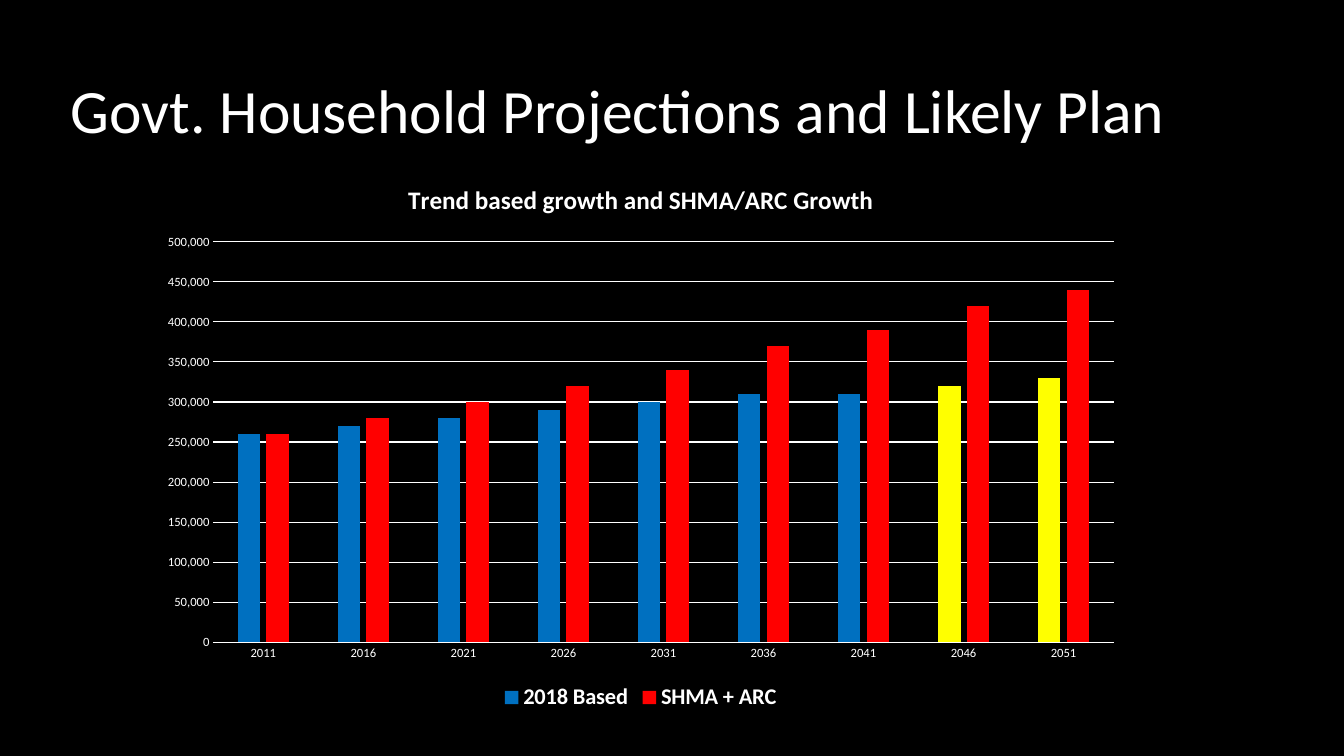
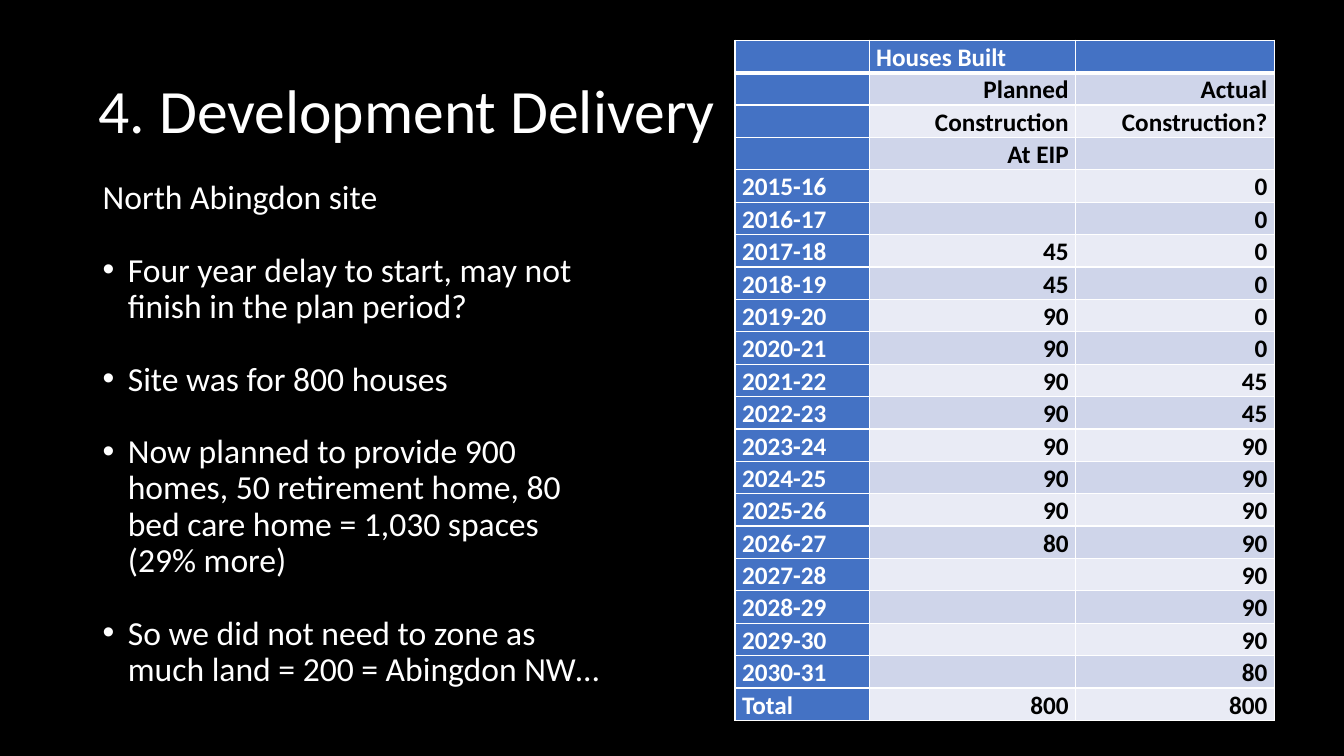
from dataclasses import dataclass

from lxml import etree
from pptx import Presentation
from pptx.chart.data import CategoryChartData
from pptx.dml.color import RGBColor
from pptx.enum.chart import XL_CHART_TYPE, XL_LEGEND_POSITION, XL_TICK_MARK
from pptx.enum.text import MSO_ANCHOR, PP_ALIGN
from pptx.oxml.ns import qn
from pptx.util import Inches, Pt

COLUMNS = XL_CHART_TYPE.COLUMN_CLUSTERED
LEGEND_BOTTOM = XL_LEGEND_POSITION.BOTTOM
NO_TICK = XL_TICK_MARK.NONE
MIDDLE, BOTTOM, TOP = MSO_ANCHOR.MIDDLE, MSO_ANCHOR.BOTTOM, MSO_ANCHOR.TOP
LEFT, RIGHT = PP_ALIGN.LEFT, PP_ALIGN.RIGHT

BLACK = RGBColor(0x00, 0x00, 0x00)
WHITE = RGBColor(0xFF, 0xFF, 0xFF)
TREND_BLUE = RGBColor(0x00, 0x70, 0xC0)
GROWTH_RED = RGBColor(0xFF, 0x00, 0x00)
EXTRAPOLATED_YELLOW = RGBColor(0xFF, 0xFF, 0x00)
HEADER_BLUE = RGBColor(0x44, 0x72, 0xC4)
BAND_DARK = RGBColor(0xCF, 0xD5, 0xEA)
BAND_LIGHT = RGBColor(0xE9, 0xEB, 0xF5)
FONT = "Calibri"


@dataclass(frozen=True)
class Projection:
    name: str
    households: tuple[int, ...]
    color: RGBColor
    extrapolated: tuple[int, ...] = ()


@dataclass(frozen=True)
class DeliveryRow:
    label: str
    planned: str
    actual: str


PROJECTION_YEARS = [str(year) for year in range(2011, 2052, 5)]
PROJECTIONS = (
    Projection("2018 Based",
               (260000, 270000, 280000, 290000, 300000, 310000, 310000, 320000, 330000),
               TREND_BLUE, (7, 8)),
    Projection("SHMA + ARC",
               (260000, 280000, 300000, 320000, 340000, 370000, 390000, 420000, 440000),
               GROWTH_RED),
)

PLANNED = ["", "", 45, 45, *[90] * 7, 80, "", "", "", ""]
ACTUAL = [*[0] * 6, 45, 45, *[90] * 7, 80]
DELIVERY = [
    DeliveryRow("", "Houses Built", ""),
    DeliveryRow("", "Planned", "Actual"),
    DeliveryRow("", "Construction", "Construction?"),
    DeliveryRow("", "At EIP", ""),
    *[DeliveryRow(f"{year}-{year % 100 + 1}", str(planned), str(actual))
      for year, planned, actual in zip(range(2015, 2031), PLANNED, ACTUAL)],
    DeliveryRow("Total", "800", "800"),
]

SITE_POINTS = [
    "Four year delay to start, may not finish in the plan period?",
    "Site was for 800 houses",
    "Now planned to provide 900 homes, 50 retirement home, 80 bed care home"
    " = 1,030 spaces (29% more)",
    "So we did not need to zone as much land = 200 = Abingdon NW…",
]


def set_font(font, size: float, color: RGBColor, bold: bool = False) -> None:
    font.name, font.size, font.bold = FONT, Pt(size), bold
    font.color.rgb = color


def add_bullet(paragraph) -> None:
    properties = paragraph._p.get_or_add_pPr()
    properties.set("marL", str(Inches(0.25)))
    properties.set("indent", str(Inches(-0.25)))
    etree.SubElement(properties, qn("a:buFont")).set("typeface", "Arial")
    etree.SubElement(properties, qn("a:buChar")).set("char", "•")


def write_text(frame, lines: list[str], *, size: float, color: RGBColor = WHITE,
               bold: bool = False, align: PP_ALIGN = LEFT, spacing: float = 0.9,
               gap: float = 0, bullets_from: int | None = None) -> None:
    for index, line in enumerate(lines):
        paragraph = frame.paragraphs[0] if index == 0 else frame.add_paragraph()
        paragraph.alignment = align
        paragraph.line_spacing = spacing
        paragraph.space_before = Pt(gap if index else 0)
        run = paragraph.add_run()
        run.text = line
        set_font(run.font, size, color, bold)
        if bullets_from is not None and index >= bullets_from:
            add_bullet(paragraph)


def add_text_box(slide, left: float, top: float, width: float, height: float,
                 anchor: MSO_ANCHOR):
    box = slide.shapes.add_textbox(Inches(left), Inches(top), Inches(width), Inches(height))
    frame = box.text_frame
    frame.word_wrap = True
    frame.vertical_anchor = anchor
    return frame


def add_titled_slide(deck, title: str, left: float, width: float):
    slide = deck.slides.add_slide(deck.slide_layouts[6])
    write_text(add_text_box(slide, left, 0.4, width, 1.45, MIDDLE), [title], size=44)
    return slide


def set_line(line, color: RGBColor) -> None:
    line.color.rgb = color
    line.width = Pt(0.75)


def add_projection_chart(slide) -> None:
    data = CategoryChartData(number_format="#,##0")
    data.categories = PROJECTION_YEARS
    for projection in PROJECTIONS:
        data.add_series(projection.name, projection.households)
    chart = slide.shapes.add_chart(COLUMNS, Inches(1.47), Inches(1.6), Inches(9.77),
                                   Inches(5.5), data).chart
    set_font(chart.font, 10, WHITE)
    write_text(chart.chart_title.text_frame, ["Trend based growth and SHMA/ARC Growth"],
               size=18, bold=True, spacing=1)
    chart.chart_title.include_in_layout = False

    chart.has_legend = True
    chart.legend.position = LEGEND_BOTTOM
    chart.legend.include_in_layout = False
    set_font(chart.legend.font, 16, WHITE, True)

    years, households = chart.category_axis, chart.value_axis
    for axis in (years, households):
        axis.major_tick_mark = axis.minor_tick_mark = NO_TICK
        set_font(axis.tick_labels.font, 9, WHITE)
    set_line(years.format.line, WHITE)
    households.format.line.fill.background()
    households.minimum_scale, households.maximum_scale = 0, 500000
    households.major_unit = 50000
    set_line(households.major_gridlines.format.line, WHITE)
    households.tick_labels.number_format = "#,##0"
    households.tick_labels.number_format_is_linked = False

    plot = chart.plots[0]
    plot.gap_width, plot.overlap = 219, -27
    plot.vary_by_categories = False
    for bars, projection in zip(plot.series, PROJECTIONS):
        bars.invert_if_negative = False
        bars.format.fill.solid()
        bars.format.fill.fore_color.rgb = projection.color
        for index in projection.extrapolated:
            fill = bars.points[index].format.fill
            fill.solid()
            fill.fore_color.rgb = EXTRAPOLATED_YELLOW


def set_borders(cell, top: float, bottom: float) -> None:
    properties = cell._tc.get_or_add_tcPr()
    widths = {"a:lnL": 1, "a:lnR": 1, "a:lnT": top, "a:lnB": bottom}
    for position, (side, width) in enumerate(widths.items()):
        border = etree.Element(qn(side), w=str(Pt(width)))
        fill = etree.SubElement(border, qn("a:solidFill"))
        etree.SubElement(fill, qn("a:srgbClr")).set("val", str(WHITE))
        properties.insert(position, border)


def add_delivery_table(slide) -> None:
    widths = (1.33, 2.05, 1.97)
    row_height = 0.32
    table = slide.shapes.add_table(
        len(DELIVERY), len(widths), Inches(7.29), Inches(0.4), Inches(sum(widths)),
        Inches(row_height * len(DELIVERY))).table
    for column, width in zip(table.columns, widths):
        column.width = Inches(width)
    for row_index, row in enumerate(DELIVERY):
        table.rows[row_index].height = Inches(row_height)
        band = BAND_DARK if row_index % 2 else BAND_LIGHT
        for column_index, text in enumerate((row.label, row.planned, row.actual)):
            cell = table.cell(row_index, column_index)
            is_header = row_index == 0 or column_index == 0
            cell.fill.solid()
            cell.fill.fore_color.rgb = HEADER_BLUE if is_header else band
            cell.margin_left = cell.margin_right = Inches(0.07)
            cell.margin_top = cell.margin_bottom = Inches(0)
            cell.vertical_anchor = BOTTOM
            set_borders(cell, 3 if row_index == 1 else 1, 3 if row_index == 0 else 1)
            if text:
                write_text(cell.text_frame, [text], size=18, bold=True, spacing=1.07,
                           color=WHITE if is_header else BLACK,
                           align=LEFT if is_header else RIGHT)


def main() -> None:
    deck = Presentation()
    deck.slide_width, deck.slide_height = Inches(13.33), Inches(7.5)
    background = deck.slide_master.background.fill
    background.solid()
    background.fore_color.rgb = BLACK

    projections = add_titled_slide(
        deck, "Govt. Household Projections and Likely Plan", 0.6, 11.82)
    add_projection_chart(projections)

    delivery = add_titled_slide(deck, "4. Development Delivery", 0.88, 11.5)
    write_text(add_text_box(delivery, 0.92, 1.74, 5.23, 5.21, TOP),
               ["North Abingdon site", *SITE_POINTS], size=24, gap=26, bullets_from=1)
    add_delivery_table(delivery)

    deck.save("out.pptx")


if __name__ == "__main__":
    main()
